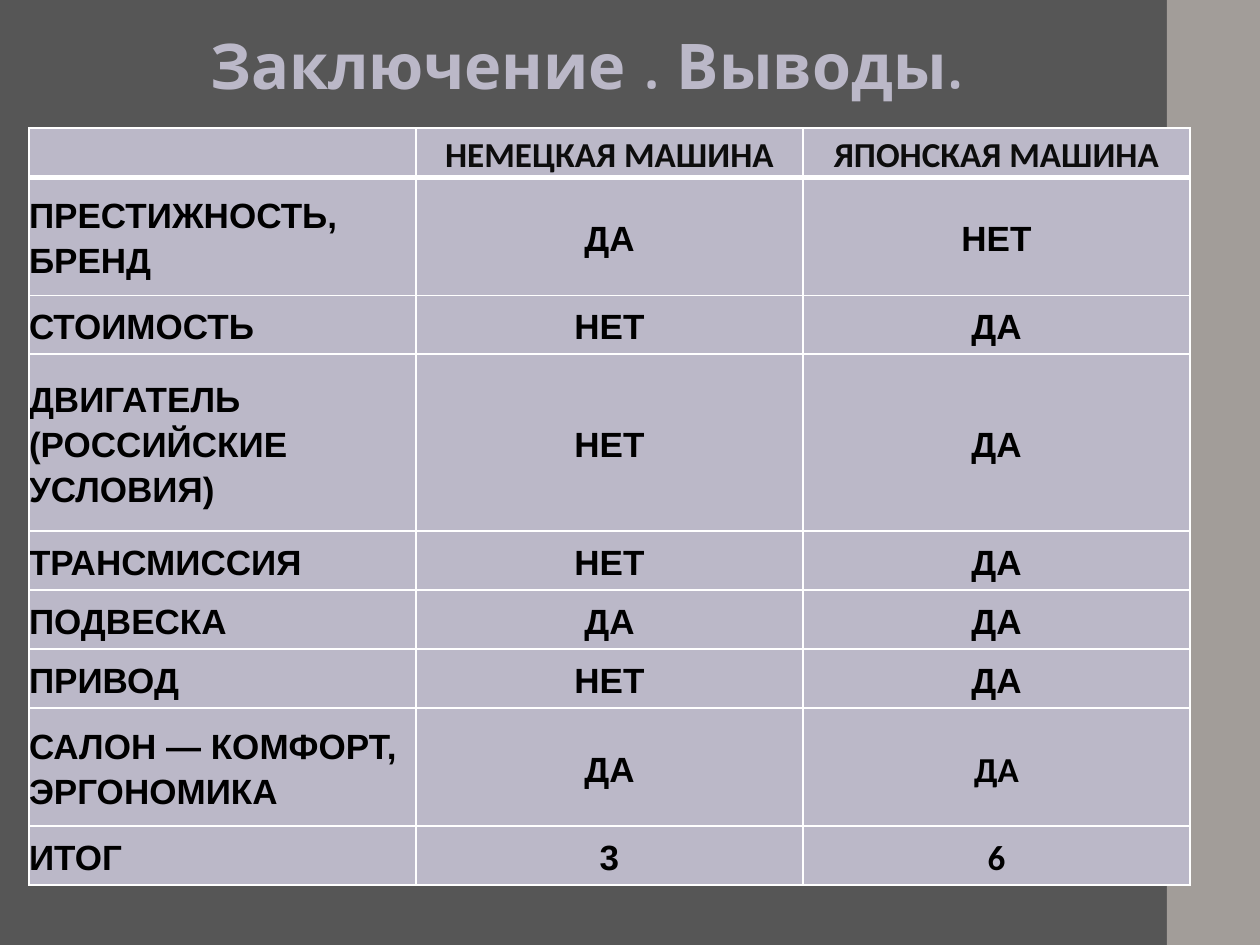
from lxml import etree
from pptx import Presentation
from pptx.dml.color import RGBColor
from pptx.enum.shapes import MSO_SHAPE
from pptx.enum.text import MSO_ANCHOR, MSO_AUTO_SIZE, PP_ALIGN
from pptx.oxml.ns import qn
from pptx.util import Pt

RECT = MSO_SHAPE.RECTANGLE
MIDDLE = MSO_ANCHOR.MIDDLE
GROW = MSO_AUTO_SIZE.SHAPE_TO_FIT_TEXT
LEFT = PP_ALIGN.LEFT
CENTER = PP_ALIGN.CENTER

INK = {"back": "565656", "band": "A29D99", "cell": "BBB8C8",
       "head": "0D0D0D", "text": "000000", "rule": "FFFFFF"}
ROWS = [
    (49, "", "НЕМЕЦКАЯ МАШИНА", "ЯПОНСКАЯ МАШИНА"),
    (118, "ПРЕСТИЖНОСТЬ, БРЕНД", "ДА", "НЕТ"),
    (59, "СТОИМОСТЬ", "НЕТ", "ДА"),
    (177, "ДВИГАТЕЛЬ (РОССИЙСКИЕ УСЛОВИЯ)", "НЕТ", "ДА"),
    (59, "ТРАНСМИССИЯ", "НЕТ", "ДА"),
    (59, "ПОДВЕСКА", "ДА", "ДА"),
    (59, "ПРИВОД", "НЕТ", "ДА"),
    (118, "САЛОН — КОМФОРТ, ЭРГОНОМИКА", "ДА", "ДА"),
    (59, "ИТОГ", "3", "6"),
]
COL = 387


def px(n):
    return round(n * 914400 / 126)


def style(font, name, size, color):
    font.name = name
    font.size = Pt(size)
    font.bold = True
    font.color.rgb = RGBColor.from_string(INK[color])


deck = Presentation()
deck.slide_width = px(1260)
deck.slide_height = px(945)
slide = deck.slides.add_slide(deck.slide_layouts[6])
slide.background.fill.solid()
slide.background.fill.fore_color.rgb = RGBColor.from_string(INK["back"])

band = slide.shapes.add_shape(RECT, px(1167), 0, px(93), px(945))
band.shadow.inherit = False
band.fill.solid()
band.fill.fore_color.rgb = RGBColor.from_string(INK["band"])
band.line.fill.background()

high = sum(row[0] for row in ROWS)
table = slide.shapes.add_table(
    len(ROWS), 3, px(29), px(128), px(3 * COL), px(high)).table
for col in table.columns:
    col.width = px(COL)

for r, (tall, *words) in enumerate(ROWS):
    table.rows[r].height = px(tall)
    for c, word in enumerate(words):
        cell = table.cell(r, c)
        cell.margin_left = cell.margin_right = 0
        cell.margin_top = cell.margin_bottom = 0
        cell.vertical_anchor = MIDDLE
        para = cell.text_frame.paragraphs[0]
        para.alignment = CENTER if c else LEFT
        para.line_spacing = 1.15
        plain = r == 0 or (c == 2 and r >= 7)
        face = "Calibri" if plain else "Arial"
        color = "text" if r else "head"
        if word:
            run = para.add_run()
            run.text = word
            style(run.font, face, 20, color)
        else:
            style(para.font, face, 20, color)
        prop = cell._tc.get_or_add_tcPr()
        for side in ("lnL", "lnR", "lnT", "lnB"):
            thick = (r == 0 and side == "lnB") or (r == 1 and side == "lnT")
            line = etree.SubElement(prop, qn("a:" + side))
            line.set("w", str(Pt(3 if thick else 1)))
            fill = etree.SubElement(line, qn("a:solidFill"))
            etree.SubElement(fill, qn("a:srgbClr")).set("val", INK["rule"])
        cell.fill.solid()
        cell.fill.fore_color.rgb = RGBColor.from_string(INK["cell"])

title = slide.shapes.add_textbox(0, px(20), px(1191), px(89))
frame = title.text_frame
frame.word_wrap = True
frame.auto_size = GROW
para = frame.paragraphs[0]
para.alignment = CENTER
run = para.add_run()
run.text = "Заключение . Выводы. "
style(run.font, "Quicksand", 36, "cell")

deck.save("out.pptx")
